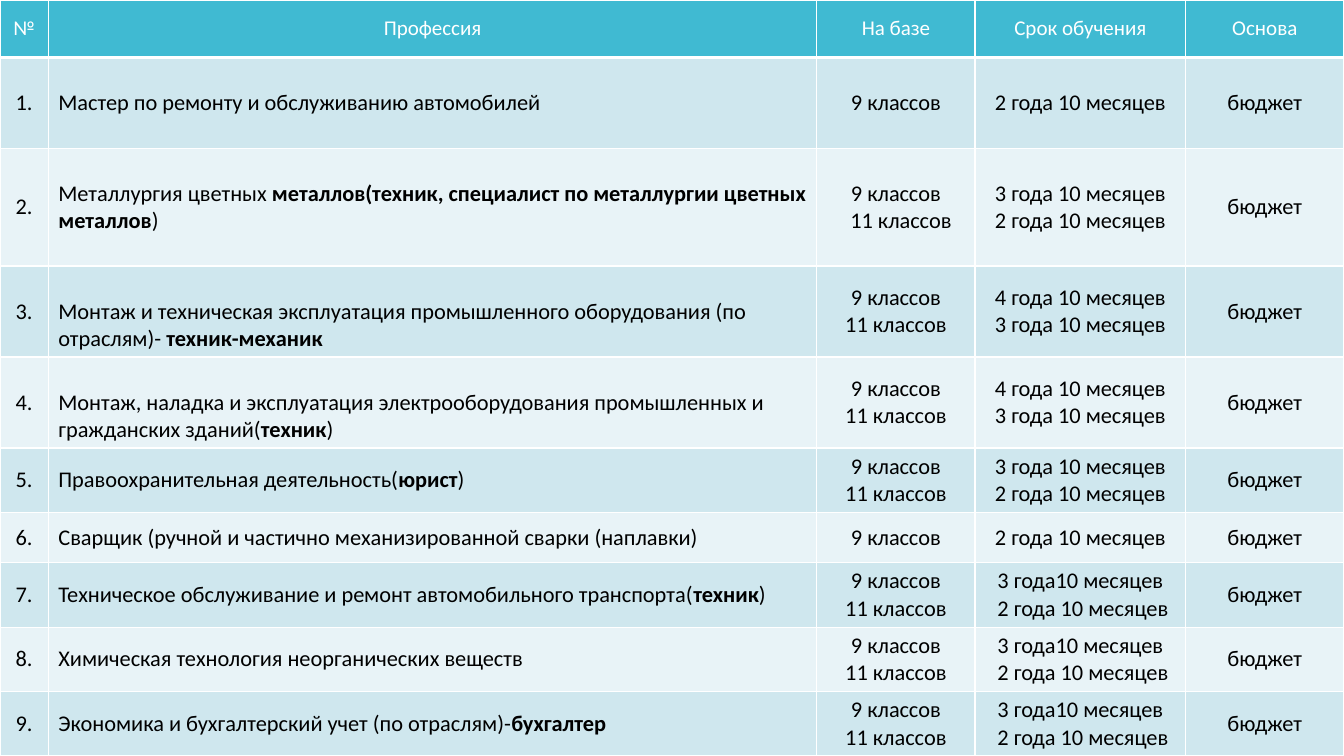
"""Build a slide with a full-page table of professions and study terms."""
from lxml import etree
from pptx import Presentation
from pptx.dml.color import RGBColor
from pptx.enum import text
from pptx.oxml.ns import qn
from pptx.util import Pt


def colour(value):
    return RGBColor.from_string(value)


def add_border(cell, side, width):
    line = etree.SubElement(cell._tc.get_or_add_tcPr(), qn(f"a:ln{side}"), w=str(Pt(width)))
    fill = etree.SubElement(line, qn("a:solidFill"))
    etree.SubElement(fill, qn("a:srgbClr"), val="FFFFFF")


HEADER = ["№", "Профессия", "На базе", "Срок обучения", "Основа"]
NINE = "9 классов"
BOTH = "9 классов\n11 классов"
LONG = "4 года 10 месяцев\n3 года 10 месяцев"
MIDDLE = "3 года 10 месяцев\n2 года 10 месяцев"
TIGHT = "3 года10 месяцев\n2 года 10 месяцев"
SHORT = "2 года 10 месяцев"

# Asterisks enclose bold words.
PROFESSIONS = [
    ("Мастер по ремонту и обслуживанию автомобилей", NINE, SHORT),
    ("Металлургия цветных *металлов(техник, специалист по металлургии цветных металлов*)",
     BOTH, MIDDLE),
    ("Монтаж и техническая эксплуатация промышленного оборудования (по отраслям)- "
     "*техник-механик*", BOTH, LONG),
    ("Монтаж, наладка и эксплуатация электрооборудования промышленных и гражданских "
     "зданий(*техник*)", BOTH, LONG),
    ("Правоохранительная деятельность(*юрист*)", BOTH, MIDDLE),
    ("Сварщик (ручной и частично механизированной сварки (наплавки)", NINE, SHORT),
    ("Техническое обслуживание и ремонт автомобильного транспорта(*техник*)", BOTH, TIGHT),
    ("Химическая технология неорганических веществ", BOTH, TIGHT),
    ("Экономика и бухгалтерский учет (по отраслям)-*бухгалтер*", BOTH, TIGHT),
]
COLUMN_WIDTHS = [34.5, 549, 113, 150.5, 113]
ROW_HEIGHTS = [41, 65, 84, 65, 65, 46, 36, 46, 46, 46]
SECOND_LINE_INDENTS = {(2, 2): 7.2, (7, 3): 3.6, (8, 3): 3.6, (9, 3): 3.6}
LOWERED_CELLS = [(3, 1), (4, 1)]

deck = Presentation()
deck.slide_width, deck.slide_height = Pt(960), Pt(540)
page = deck.slides.add_slide(deck.slide_layouts[6])

rows = [HEADER] + [
    [f"{number}.", *profession, "бюджет"]
    for number, profession in enumerate(PROFESSIONS, 1)
]
table = page.shapes.add_table(
    len(rows), len(HEADER), Pt(0), Pt(0), Pt(960), Pt(540)).table
table.horz_banding = False
for column, width in zip(table.columns, COLUMN_WIDTHS):
    column.width = Pt(width)

for row_index, values in enumerate(rows):
    table.rows[row_index].height = Pt(ROW_HEIGHTS[row_index])
    is_header = row_index == 0
    background = "40BAD2" if is_header else ("E8F3F7", "CFE7EE")[row_index % 2]
    for column_index, value in enumerate(values):
        cell = table.cell(row_index, column_index)
        for side in "LRTB":
            add_border(cell, side, 3 if is_header and side == "B" else 1)
        cell.fill.solid()
        cell.fill.fore_color.rgb = colour(background)
        cell.vertical_anchor = text.MSO_ANCHOR.MIDDLE
        lowered = (row_index, column_index) in LOWERED_CELLS
        cell.margin_top = Pt(22 if lowered else 3)
        cell.margin_bottom = Pt(2 if lowered else 3)

        for line_index, line in enumerate(value.split("\n")):
            frame = cell.text_frame
            para = frame.add_paragraph() if line_index else frame.paragraphs[0]
            centred = is_header or column_index != 1
            para.alignment = text.PP_ALIGN.CENTER if centred else text.PP_ALIGN.LEFT
            indent = SECOND_LINE_INDENTS.get((row_index, column_index))
            if line_index and indent:
                para._p.get_or_add_pPr().set("marL", str(Pt(indent)))
            para.font.name = "Calibri"
            para.font.size = Pt(15 if is_header else 16)
            para.font.color.rgb = colour("FFFFFF" if is_header else "000000")
            for part_index, part in enumerate(line.split("*")):
                if part:
                    span = para.add_run()
                    span.text = part
                    span.font.bold = part_index % 2 == 1

deck.save("out.pptx")
